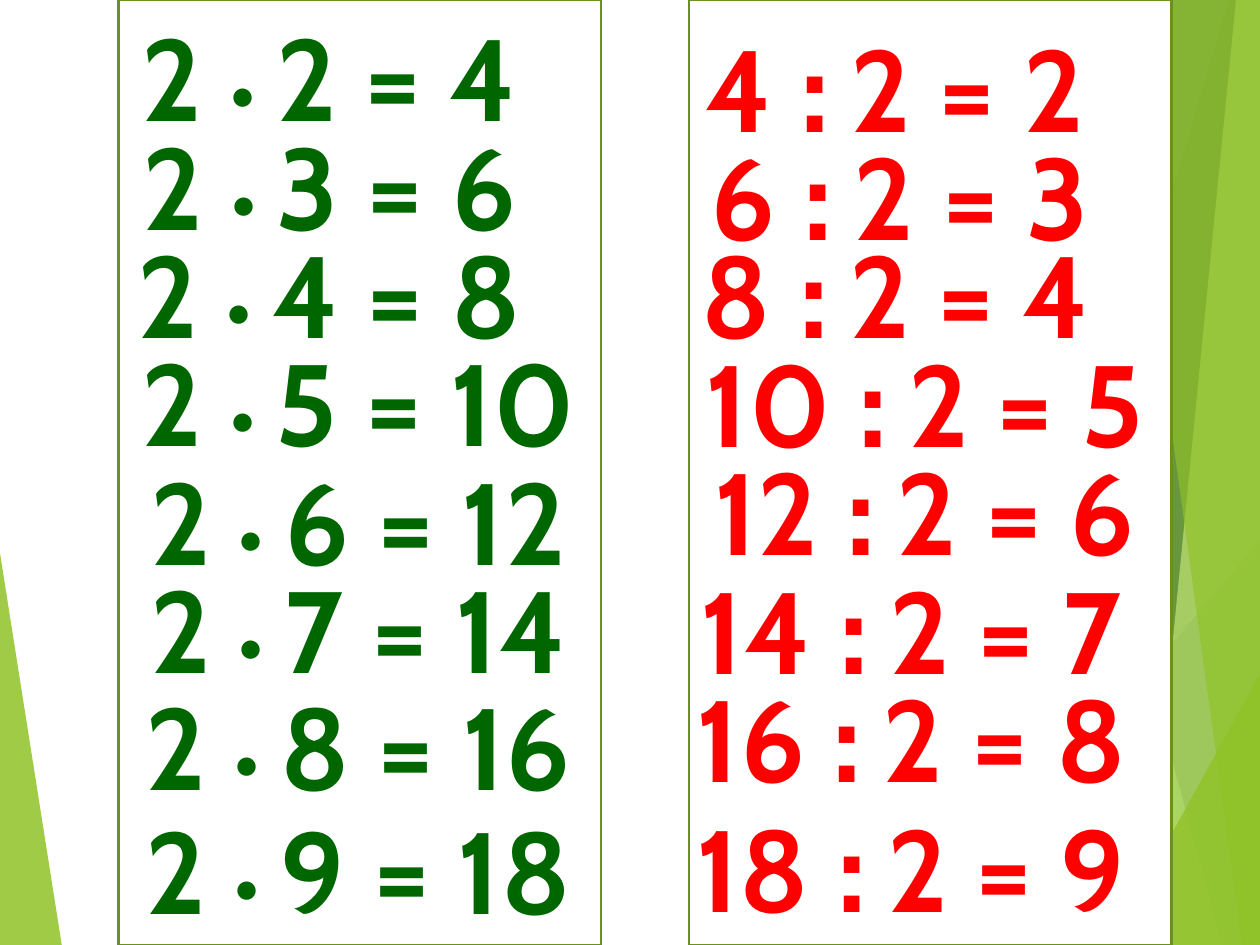
from lxml import etree
from pptx import Presentation
from pptx.dml.color import RGBColor
from pptx.enum.shapes import MSO_CONNECTOR, MSO_SHAPE
from pptx.enum.text import MSO_AUTO_SIZE, PP_ALIGN
from pptx.oxml.ns import qn
from pptx.util import Inches, Pt

STRAIGHT = MSO_CONNECTOR.STRAIGHT
RECTANGLE = MSO_SHAPE.RECTANGLE
FIT_TEXT = MSO_AUTO_SIZE.SHAPE_TO_FIT_TEXT
CENTER = PP_ALIGN.CENTER

WIDTH, HEIGHT = 10, 7.5
FONT = "Cabin"
GREEN, RED = "006600", "FF0000"

RAYS = [
    ((5.61, HEIGHT), (WIDTH, 4.57), "D9D9D9"),
    ((7.7, 0), (9.04, HEIGHT), "BFBFBF"),
]
LEFT_FACET = ([(0, 4.39), (0.49, HEIGHT), (0, HEIGHT)], "90C226", 85)
# Each right-hand facet: top x or start, bottom x, colour, opacity
RIGHT_FACETS = [
    ((9.75, 0), 7.54, "90C226", 30),
    ((7.88, 0), 9.19, "90C226", 20),
    ((WIDTH, 4.29), 7.26, "54A021", 72),
    ((7.67, 0), 9.7, "3F7819", 70),
    ((9.81, 0), 9.07, "C0E474", 70),
    ((8.83, 0), 9.86, "90C226", 65),
    ((WIDTH, 5.35), 8.81, "90C226", 80),
]
PRODUCTS = [
    ("2 = 4", (0.23, 0, 4.77, 1.21)),
    ("3 = 6", (0.23, 0.86, 4.77, 1.21)),
    ("4 = 8", (0, 1.72, 5.23, 1.21)),
    ("5 = 10", (0.23, 2.58, 5.23, 1.21)),
    ("6 = 12", (0.23, 3.52, 5.23, 1.21)),
    ("7 = 14", (0.23, 4.38, 5.23, 1.21)),
    ("8 = 16", (0.23, 5.31, 5.23, 1.21)),
    ("9 = 18", (0.23, 6.29, 5.23, 1.21)),
]
QUOTIENTS = [
    ("4 ", "2 = 2", (4.84, 0, 4.53, 1.31)),
    ("6 ", "2 = 3", (4.53, 0.86, 5.23, 1.31)),
    ("8 ", "2 = 4", (4.69, 1.64, 4.84, 1.31)),
    ("10 ", "2 = 5", (4.92, 2.5, 4.84, 1.31)),
    ("12 ", "2 = 6", (4.92, 3.36, 4.84, 1.31)),
    ("14 ", "2 = 7 ", (4.92, 4.3, 4.84, 1.31)),
    ("16 ", "2 = 8 ", (4.92, 5.16, 4.84, 1.31)),
    ("18 ", "2 = 9 ", (4.92, 6.19, 4.84, 1.31)),
]


def rgb(value):
    """Turn a hex string into a colour."""
    return RGBColor.from_string(value)


def add_facet(slide, corners, colour, opacity):
    """Draw one translucent polygon of the background."""
    points = [(Inches(x), Inches(y)) for x, y in corners]
    outline = slide.shapes.build_freeform(*points[0], scale=1.0)
    outline.add_line_segments(points[1:], close=True)
    facet = outline.convert_to_shape()
    facet.shadow.inherit = False
    facet.fill.solid()
    facet.fill.fore_color.rgb = rgb(colour)
    facet.line.fill.background()
    tint = facet.fill._xPr.find(".//" + qn("a:srgbClr"))
    etree.SubElement(tint, qn("a:alpha")).set("val", str(opacity * 1000))


def add_ray(slide, start, end, colour):
    """Draw one thin line of the background."""
    ray = slide.shapes.add_connector(STRAIGHT, *map(Inches, start + end))
    ray.line.color.rgb = rgb(colour)
    ray.line.width = Pt(0.75)
    etree.SubElement(ray._element.spPr, qn("a:effectLst"))


def add_background(slide, right, bottom):
    """Place the facets and rays along the slide's outer edges."""
    add_facet(slide, *LEFT_FACET)
    for ray in RAYS:
        add_ray(slide, *ray)
    for (x, y), foot, colour, opacity in RIGHT_FACETS:
        corners = [(x, y), (foot, bottom), (right, bottom)]
        if x < right:
            corners.append((right, y))
        add_facet(slide, corners, colour, opacity)


def add_panel(slide, box):
    """Draw the white framed panel behind a column."""
    panel = slide.shapes.add_shape(RECTANGLE, *map(Inches, box))
    panel.shadow.inherit = False
    panel.fill.solid()
    panel.fill.fore_color.rgb = rgb("FFFFFF")
    panel.line.color.rgb = rgb("6B901C")
    panel.line.width = Pt(1.5)


def add_text(slide, box, pieces, colour, spacing=0.5):
    """Write one centred equation from (text, size) pieces."""
    frame = slide.shapes.add_textbox(*map(Inches, box)).text_frame
    frame.word_wrap = True
    frame.auto_size = FIT_TEXT
    equation = frame.paragraphs[0]
    equation.alignment = CENTER
    for text, size in pieces:
        run = equation.add_run()
        run.text = text
        run.font.name = FONT
        run.font.size = Pt(size)
        run.font.bold = True
        run.font.color.rgb = rgb(colour)
        run.font._element.set("spc", str(int(spacing * 100)))


def add_products(slide):
    """Write the multiplication column."""
    for answer, box in PRODUCTS:
        add_text(slide, box, [("2 ", 66), ("• ", 48), (answer, 66)], colour=GREEN)


def add_quotients(slide):
    """Write the division column."""
    for dividend, answer, box in QUOTIENTS:
        pieces = [(dividend, 66), (":", 72), (" ", 48), (answer, 66)]
        add_text(slide, box, pieces, colour=RED)


def main():
    """Build and save the times-table slide."""
    deck = Presentation()
    deck.slide_width, deck.slide_height = Inches(WIDTH), Inches(HEIGHT)
    slide = deck.slides.add_slide(deck.slide_layouts[6])
    add_background(slide, WIDTH, HEIGHT)
    for left in (5.47, 0.94):
        add_panel(slide, (left, 0, 3.83, HEIGHT))
    add_products(slide)
    add_quotients(slide)
    deck.save("out.pptx")


if __name__ == "__main__":
    main()
